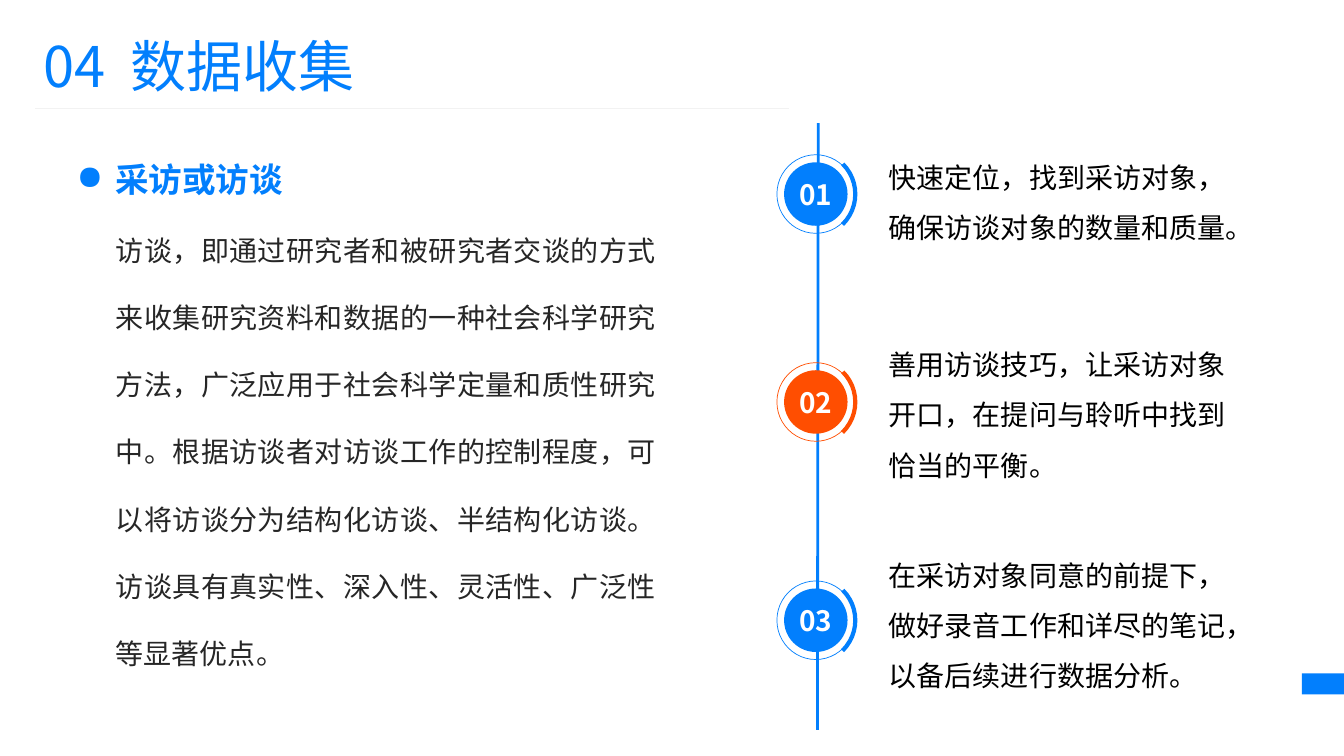
import pptx
import pptx.dml.color
import pptx.enum.shapes
import pptx.enum.text
import pptx.oxml.ns
import pptx.util
from lxml import etree

Cm = pptx.util.Cm
Pt = pptx.util.Pt
RGBColor = pptx.dml.color.RGBColor
Shape = pptx.enum.shapes.MSO_SHAPE
Align = pptx.enum.text.PP_ALIGN
Anchor = pptx.enum.text.MSO_ANCHOR
AutoSize = pptx.enum.text.MSO_AUTO_SIZE
qn = pptx.oxml.ns.qn

BLUE = RGBColor(0x02, 0x7F, 0xFD)
ORANGE = RGBColor(0xFF, 0x4E, 0x01)
RULE_GREY = RGBColor(0xF2, 0xF2, 0xF2)
INK = RGBColor(0x26, 0x26, 0x26)
BLACK = RGBColor(0, 0, 0)
WHITE = RGBColor(0xFF, 0xFF, 0xFF)
FONT = "Noto Sans CJK SC"

TITLE = ("04", " ", "数据收集")
HEADING = "采访或访谈"
BODY = (
    "访谈，即通过研究者和被研究者交谈的方式来收集研究资料和数据的一种社会科学研究方法，"
    "广泛应用于社会科学定量和质性研究中。根据访谈者对访谈工作的控制程度，"
    "可以将访谈分为结构化访谈、半结构化访谈。"
    "访谈具有真实性、深入性、灵活性、广泛性等显著优点。"
)
STEPS = [
    {"advice": "快速定位，找到采访对象，确保访谈对象的数量和质量。",
     "color": BLUE, "center": 4.89, "top": 3.61, "width": 9.02, "lines": 2},
    {"advice": "善用访谈技巧，让采访对象开口，在提问与聆听中找到恰当的平衡。",
     "color": ORANGE, "center": 10.13, "top": 8.33, "width": 8.76, "lines": 3},
    {"advice": "在采访对象同意的前提下，做好录音工作和详尽的笔记，以备后续进行数据分析。",
     "color": BLUE, "center": 15.63, "top": 13.64, "width": 9.02, "lines": 3},
]
MARKER_X, ARC_X = 20.56, 20.50
ADVICE_X, LINE_HEIGHT = 22.40, 1.28


def style(paragraph, size, color, bold=False, spacing=None, align=Align.LEFT):
    """Set the font, line spacing and alignment of a paragraph."""
    font = paragraph.font
    font.name, font.size, font.bold = FONT, Pt(size), bold
    font.color.rgb = color
    defaults = paragraph._p.pPr.find(qn("a:defRPr"))
    etree.SubElement(defaults, qn("a:ea")).set("typeface", FONT)
    paragraph.alignment = align
    if spacing:
        paragraph.line_spacing = spacing


def clear_margins(frame):
    """Remove the inner margins of a text frame."""
    frame.margin_left = frame.margin_right = 0
    frame.margin_top = frame.margin_bottom = 0


def add_text(slide, box, text, size, color, **options):
    """Add a wrapping text box without margins and return its frame."""
    frame = slide.shapes.add_textbox(*map(Cm, box)).text_frame
    frame.word_wrap = True
    clear_margins(frame)
    frame.text = text
    style(frame.paragraphs[0], size, color, **options)
    return frame


def add_line(slide, ends, color, width):
    """Add a straight line without shadow."""
    line = slide.shapes.add_connector(
        pptx.enum.shapes.MSO_CONNECTOR.STRAIGHT, *map(Cm, ends))
    line.line.color.rgb = color
    line.line.width = Pt(width)
    etree.SubElement(line._element.spPr, qn("a:effectLst"))


def add_part(slide, preset, box, color, outline=None):
    """Add a filled shape, or an outlined one when a line width is given."""
    part = slide.shapes.add_shape(preset, *map(Cm, box))
    part.shadow.inherit = False
    if outline is None:
        part.fill.solid()
        part.fill.fore_color.rgb = color
        part.line.fill.background()
    else:
        part.fill.background()
        part.line.color.rgb = color
        part.line.width = Pt(outline)
    return part


def around(x, y, width, height):
    """Return the box of a given size centred on a point."""
    return x - width / 2, y - height / 2, width, height


def add_title(slide):
    """Place the slide title, widening the gap after its number."""
    title = slide.shapes.title
    title.left, title.top, title.width, title.height = map(
        Cm, (0.84, 0.66, 19.51, 1.96))
    frame = title.text_frame
    frame.vertical_anchor = Anchor.TOP
    frame.word_wrap = True
    frame.auto_size = AutoSize.NONE
    paragraph = frame.paragraphs[0]
    for piece in TITLE:
        run = paragraph.add_run()
        run.text = piece
        if piece == " ":
            run._r.get_or_add_rPr().set("spc", "900")
    style(paragraph, 40, BLUE)


def add_heading(slide):
    """Add the bulleted heading above the body text."""
    frame = add_text(slide, (1.93, 3.91, 5.41, 1.12), HEADING, 24, BLUE, bold=True)
    frame.vertical_anchor = Anchor.BOTTOM
    properties = frame.paragraphs[0]._p.pPr
    properties.set("marL", str(Cm(0.97)))
    properties.set("indent", str(-Cm(0.97)))
    bullet = etree.Element(qn("a:buChar"))
    bullet.set("char", "●")
    properties.find(qn("a:defRPr")).addprevious(bullet)


def add_step(slide, number, step):
    """Add the numbered marker and the advice of one step."""
    color, y = step["color"], step["center"]
    add_part(slide, Shape.OVAL, around(MARKER_X, y, 1.96, 1.98), color, 0.5)
    disc = add_part(slide, Shape.OVAL, around(MARKER_X, y, 1.6, 1.6), color)
    frame = disc.text_frame
    clear_margins(frame)
    frame.word_wrap = False
    frame.vertical_anchor = Anchor.MIDDLE
    frame.text = f"{number:02d}"
    style(frame.paragraphs[0], 20, WHITE, bold=True, align=Align.CENTER)
    arc = add_part(slide, Shape.ARC, around(ARC_X, y, 2.13, 2.11), color, 3)
    arc.adjustments[0], arc.adjustments[1] = 26.57, 81.76
    arc.rotation = 270
    box = ADVICE_X, step["top"], step["width"], step["lines"] * LINE_HEIGHT
    advice = add_text(slide, box, step["advice"], 20, BLACK, spacing=1.5)
    advice.auto_size = AutoSize.SHAPE_TO_FIT_TEXT


def main():
    """Build the data collection slide."""
    deck = pptx.Presentation()
    deck.slide_width, deck.slide_height = Cm(33.87), Cm(19.05)
    slide = deck.slides.add_slide(deck.slide_layouts[5])
    add_part(slide, Shape.RECTANGLE, (32.81, 16.97, 1.06, 0.53), BLUE)
    add_title(slide)
    add_line(slide, (0.89, 2.74, 19.89, 2.74), RULE_GREY, 0.5)
    add_heading(slide)
    add_text(slide, (2.92, 5.03, 13.61, 11.79), BODY, 20, INK,
             spacing=2.0, align=Align.JUSTIFY)
    add_line(slide, (20.62, 3.1, 20.6, 18.39), BLUE, 2)
    for number, step in enumerate(STEPS, 1):
        add_step(slide, number, step)
    deck.save("out.pptx")


if __name__ == "__main__":
    main()
